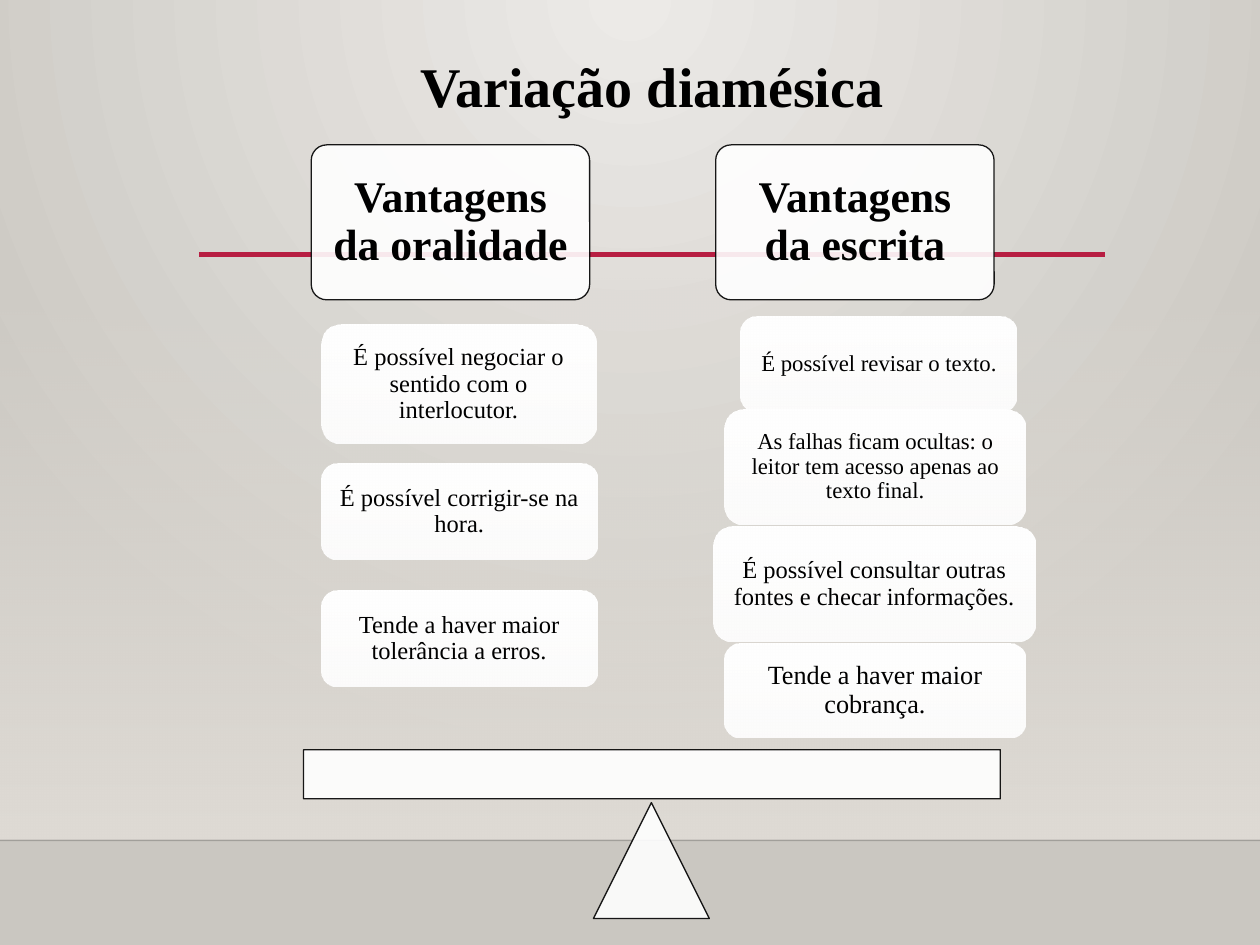
from lxml import etree
from pptx import Presentation
from pptx.dml.color import RGBColor
from pptx.enum.shapes import MSO_CONNECTOR, MSO_SHAPE
from pptx.enum.text import MSO_ANCHOR, PP_ALIGN
from pptx.oxml.ns import qn
from pptx.util import Inches, Pt

RECT, ROUNDED = MSO_SHAPE.RECTANGLE, MSO_SHAPE.ROUNDED_RECTANGLE
TRIANGLE, STRAIGHT = MSO_SHAPE.ISOSCELES_TRIANGLE, MSO_CONNECTOR.STRAIGHT
MIDDLE, TOP, CENTER = MSO_ANCHOR.MIDDLE, MSO_ANCHOR.TOP, PP_ALIGN.CENTER

FONT = "Times New Roman"
BLACK, WHITE, CRIMSON, SAND = "000000", "FFFFFF", "B71E42", "DFDBD5"
TITLE = "Variação diamésica"
TITLE_BOX = (1.58, 0.37, 7.19, 1.15)
BACKDROP = [("ECEAE7", 100), ("CAC7C1", 100)]
WALL = [(SAND, 0), (SAND, 100)]
CARD_FILL = [(WHITE, 100), (WHITE, 92)]
RULES = [
    ((0, 6.67, 10, 6.67), "000001", 1, 20),
    ((1.58, 2.02, 8.77, 2.02), CRIMSON, 2.5, 100),
]
HEADER_TOP, HEADER_SIZE = 1.15, (2.21, 1.23)
HEADERS = [("Vantagens da oralidade", 2.47), ("Vantagens da escrita", 5.68)]
SCALE = [(TRIANGLE, (4.71, 6.37, 0.92, 0.92)), (RECT, (2.41, 5.95, 5.53, 0.39))]
CARDS = [
    ("Tende a haver maior cobrança.", 15, (5.75, 5.11, 2.39, 0.74)),
    ("É possível consultar outras fontes e checar informações.", 14, (5.66, 4.18, 2.56, 0.91)),
    ("As falhas ficam ocultas: o leitor tem acesso apenas ao texto final.", 13, (5.75, 3.25, 2.39, 0.91)),
    ("É possível revisar o texto.", 13, (5.88, 2.51, 2.19, 0.76)),
    ("Tende a haver maior tolerância a erros.", 14, (2.55, 4.69, 2.19, 0.76)),
    ("É possível corrigir-se na hora.", 14, (2.55, 3.68, 2.19, 0.76)),
    ("É possível negociar o sentido com o interlocutor.", 14, (2.55, 2.58, 2.18, 0.94)),
]


def paint(color, value):
    color.rgb = RGBColor.from_string(value)


def set_alpha(parent, percents):
    for clr, percent in zip(parent.iter(qn("a:srgbClr")), percents):
        if percent < 100:
            etree.SubElement(clr, qn("a:alpha"), val=str(percent * 1000))


def set_gradient(fill, owner, stops):
    fill.gradient()
    for stop, (value, _) in zip(fill.gradient_stops, stops):
        paint(stop.color, value)
    gradient = next(owner.iter(qn("a:gradFill")))
    set_alpha(gradient, [percent for _, percent in stops])
    return gradient


def write(frame, text, size, bold, inset, anchor=MIDDLE):
    frame.text = text
    margins = dict.fromkeys(("margin_left", "margin_top", "margin_right", "margin_bottom"), Inches(inset))
    paragraph = frame.paragraphs[0]
    formats = [
        (frame, {**margins, "word_wrap": True, "vertical_anchor": anchor}),
        (paragraph, {"alignment": CENTER, "line_spacing": 0.9}),
        (paragraph.runs[0].font, {"name": FONT, "size": Pt(size), "bold": bold}),
    ]
    for target, values in formats:
        for key, value in values.items():
            setattr(target, key, value)
    paint(paragraph.runs[0].font.color, BLACK)


def add_shape(slide, kind, box):
    shape = slide.shapes.add_shape(kind, *map(Inches, box))
    shape.shadow.inherit = False
    return shape


def add_gradient_shape(slide, kind, box, stops):
    shape = add_shape(slide, kind, box)
    set_gradient(shape.fill, shape._element.spPr, stops)
    shape.fill.gradient_angle = 270
    shape.line.fill.background()
    return shape


def add_outlined_shape(slide, kind, box):
    shape = add_shape(slide, kind, box)
    shape.fill.solid()
    paint(shape.fill.fore_color, WHITE)
    paint(shape.line.color, BLACK)
    shape.line.width = Pt(0.75)
    set_alpha(shape._element.spPr, (90, 90))
    return shape


def add_rule(slide, ends, color, width, opacity):
    rule = slide.shapes.add_connector(STRAIGHT, *map(Inches, ends))
    paint(rule.line.color, color)
    rule.line.width = Pt(width)
    properties = rule._element.spPr
    set_alpha(properties, [opacity])
    etree.SubElement(properties, qn("a:effectLst"))


def set_backdrop(slide):
    gradient = set_gradient(slide.background.fill, slide._element, BACKDROP)
    gradient.remove(gradient.find(qn("a:lin")))
    circle = etree.SubElement(gradient, qn("a:path"), path="circle")
    etree.SubElement(circle, qn("a:fillToRect"), l="43000", r="43000", b="100000")


def main():
    """Build the slide that weighs the advantages of speech and writing."""
    deck = Presentation()
    deck.slide_width, deck.slide_height = Inches(10), Inches(7.5)
    slide = deck.slides.add_slide(deck.slide_layouts[5])
    set_backdrop(slide)

    title = slide.shapes.title
    title.left, title.top, title.width, title.height = map(Inches, TITLE_BOX)
    write(title.text_frame, TITLE, 32, True, 0.1, TOP)

    add_gradient_shape(slide, RECT, (0, 2.2, 10, 4.46), WALL)
    for rule in RULES:
        add_rule(slide, *rule)
    for text, left in HEADERS:
        header = add_outlined_shape(slide, ROUNDED, (left, HEADER_TOP, *HEADER_SIZE))
        header.adjustments[0] = 0.1
        write(header.text_frame, text, 25, True, 0.1)
    for kind, box in SCALE:
        add_outlined_shape(slide, kind, box)
    for text, size, box in CARDS:
        card = add_gradient_shape(slide, ROUNDED, box, CARD_FILL)
        write(card.text_frame, text, size, False, 0.05)

    deck.save("out.pptx")


if __name__ == "__main__":
    main()
